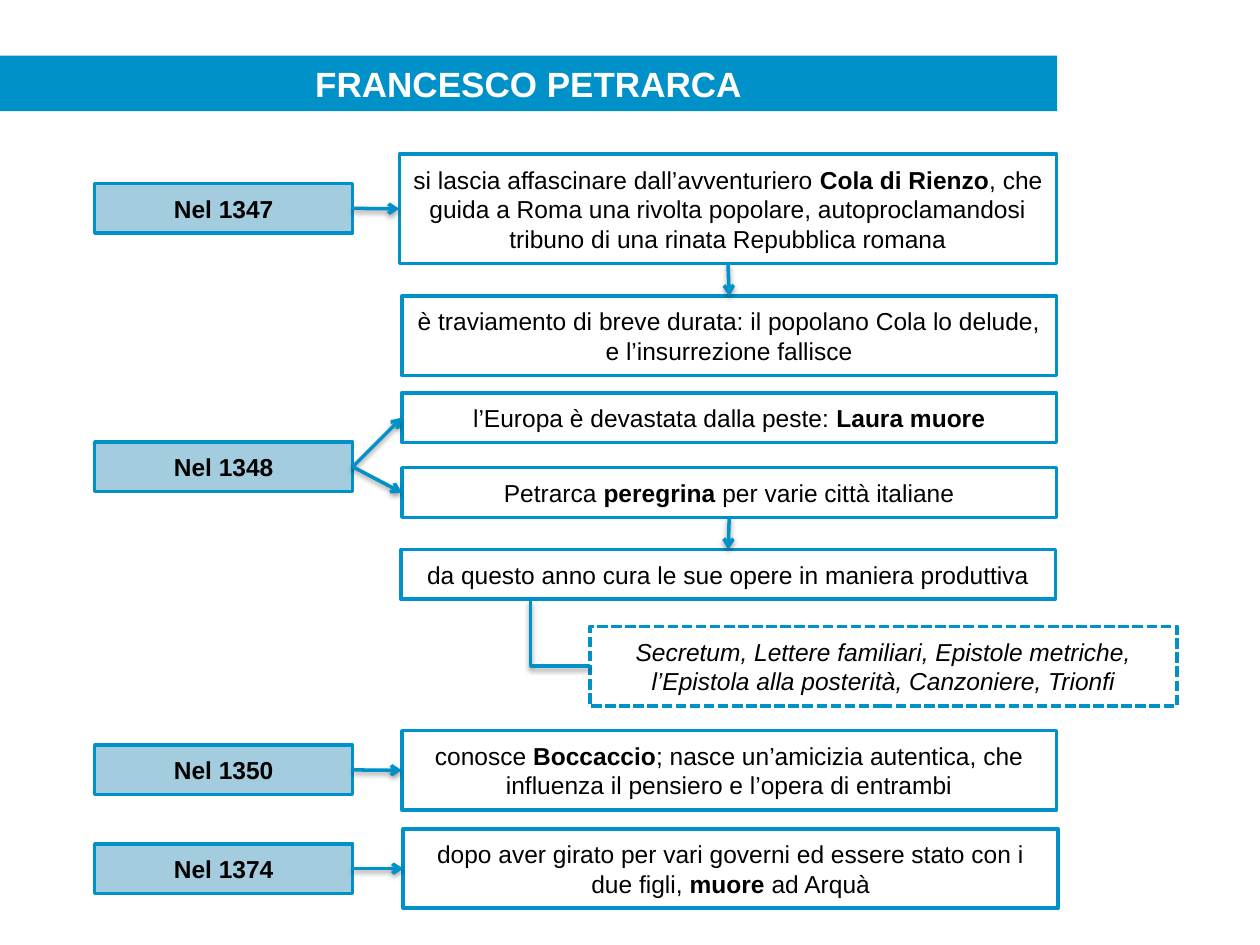
from lxml.etree import SubElement
from pptx import Presentation
from pptx.dml.color import RGBColor
from pptx.enum.dml import MSO_LINE as Dash
from pptx.enum.shapes import MSO_CONNECTOR as Conn, MSO_SHAPE as Kind
from pptx.enum.text import MSO_ANCHOR as Anchor, MSO_AUTO_SIZE as Fit, PP_ALIGN as Align
from pptx.oxml import parse_xml
from pptx.oxml.ns import nsdecls, qn
from pptx.util import Cm, Pt

BLUE = RGBColor(0x00, 0x91, 0xC8)
PALE = RGBColor(0xA3, 0xCD, 0xDF)
WHITE = RGBColor(0xFF, 0xFF, 0xFF)
BLACK = RGBColor(0x00, 0x00, 0x00)
TOP, LEFT, DOWN, RIGHT = range(4)  # connection sites of a rectangle
SHADOW = (
    f'<a:effectLst {nsdecls("a")}>'
    '<a:outerShdw blurRad="40000" dist="20000" dir="5400000" rotWithShape="0">'
    '<a:srgbClr val="000000"><a:alpha val="38000"/></a:srgbClr>'
    '</a:outerShdw></a:effectLst>'
)


def write(frame, text, size=14, color=BLACK, bold=False, italic=False):
    """Fill a frame, one paragraph a line; words between asterisks are bold."""
    frame.word_wrap = True
    frame.vertical_anchor = Anchor.MIDDLE
    for i, line in enumerate(text.split("\n")):
        para = frame.add_paragraph() if i else frame.paragraphs[0]
        para.alignment = Align.CENTER
        for j, part in enumerate(line.split("*")):
            if not part:
                continue
            run = para.add_run()
            run.text = part
            font = run.font
            font.name, font.size = "Arial", Pt(size)
            font.bold, font.italic = bold or j % 2 == 1, italic
            font.color.rgb = color


class Chart:
    """Draws the time line's elements in one style on one slide."""

    def __init__(self, slide):
        self.slide = slide
        self.shapes = slide.shapes

    def title(self, text, x, y, w, h):
        bar = self.shapes.title
        bar.left, bar.top, bar.width, bar.height = Cm(x), Cm(y), Cm(w), Cm(h)
        bar.fill.solid()
        bar.fill.fore_color.rgb = BLUE
        write(bar.text_frame, text, size=20, color=WHITE, bold=True)

    def box(self, text, x, y, w, h, fill=WHITE, dash=None, **style):
        box = self.shapes.add_shape(Kind.RECTANGLE, Cm(x), Cm(y), Cm(w), Cm(h))
        box.shadow.inherit = False
        box.fill.solid()
        box.fill.fore_color.rgb = fill
        box.line.color.rgb = BLUE
        box.line.width = Pt(2)
        if dash:
            box.line.dash_style = dash
        frame = box.text_frame
        frame.margin_left = frame.margin_right = Cm(0.25)
        frame.margin_top = frame.margin_bottom = Cm(0.2)
        frame.auto_size = Fit.SHAPE_TO_FIT_TEXT
        write(frame, text, **style)
        return box

    def year(self, num, y):
        return self.box(f"Nel {num}", 1.91, y, 5.2, 1, fill=PALE, bold=True)

    def event(self, text, y, h=1.6, x=8.1, w=13.2):
        return self.box(text, x, y, w, h)

    def link(self, kind, x1=0, y1=0, x2=0, y2=0):
        link = self.shapes.add_connector(kind, Cm(x1), Cm(y1), Cm(x2), Cm(y2))
        link.line.color.rgb = BLUE
        link.line.width = Pt(2)
        link._element.spPr.append(parse_xml(SHADOW))
        return link

    def arrow(self, start, end, out=RIGHT, into=LEFT):
        link = self.link(Conn.STRAIGHT)
        link.begin_connect(start, out)
        link.end_connect(end, into)
        SubElement(link.line._get_or_add_ln(), qn("a:tailEnd"), type="arrow")

    def elbow(self, x1, y1, x2, y2):
        """Link with a single corner, leaving sideways."""
        link = self.link(Conn.ELBOW, x1, y1, x2, y2)
        link._element.spPr.find(qn("a:prstGeom")).set("prst", "bentConnector2")


def main():
    deck = Presentation()
    deck.slide_width, deck.slide_height = Cm(25.4), Cm(19.05)
    chart = Chart(deck.slides.add_slide(deck.slide_layouts[5]))
    chart.title("FRANCESCO PETRARCA", 0, 1.12, 21.31, 1.12)

    revolt = chart.event(
        "si lascia affascinare dall’avventuriero *Cola di Rienzo*, che guida a Roma "
        "una rivolta popolare, autoproclamandosi tribuno di una rinata Repubblica romana",
        3.11, h=2.2, x=8.05, w=13.25)
    defeat = chart.event(
        "è traviamento di breve durata: il popolano Cola lo delude,\n"
        "e l’insurrezione fallisce", 5.97)
    plague = chart.event("l’Europa è devastata dalla peste: *Laura muore*", 7.92, h=1)
    travel = chart.event("Petrarca *peregrina* per varie città italiane", 9.43, h=1)
    work = chart.event("da questo anno cura le sue opere in maniera produttiva",
                       11.08, h=1, x=8.08)
    chart.box("Secretum, Lettere familiari, Epistole metriche, "
              "l’Epistola alla posterità, Canzoniere, Trionfi",
              11.89, 12.63, 11.84, 1.6, dash=Dash.SQUARE_DOT, italic=True)
    friend = chart.event(
        "conosce *Boccaccio*; nasce un’amicizia autentica, che influenza "
        "il pensiero e l’opera di entrambi", 14.73)
    death = chart.event(
        "dopo aver girato per vari governi ed essere stato con i due figli, "
        "*muore* ad Arquà", 16.71, x=8.13)

    years = [
        (1347, 3.7, [revolt]),
        (1348, 8.91, [plague, travel]),
        (1350, 15.02, [friend]),
        (1374, 17.01, [death]),
    ]
    for num, y, events in years:
        year = chart.year(num, y)
        for event in events:
            chart.arrow(year, event)
    for start, end in [(revolt, defeat), (travel, work)]:
        chart.arrow(start, end, DOWN, TOP)
    chart.elbow(11.89, 13.43, 10.7, 12.12)

    deck.save("out.pptx")


if __name__ == "__main__":
    main()
